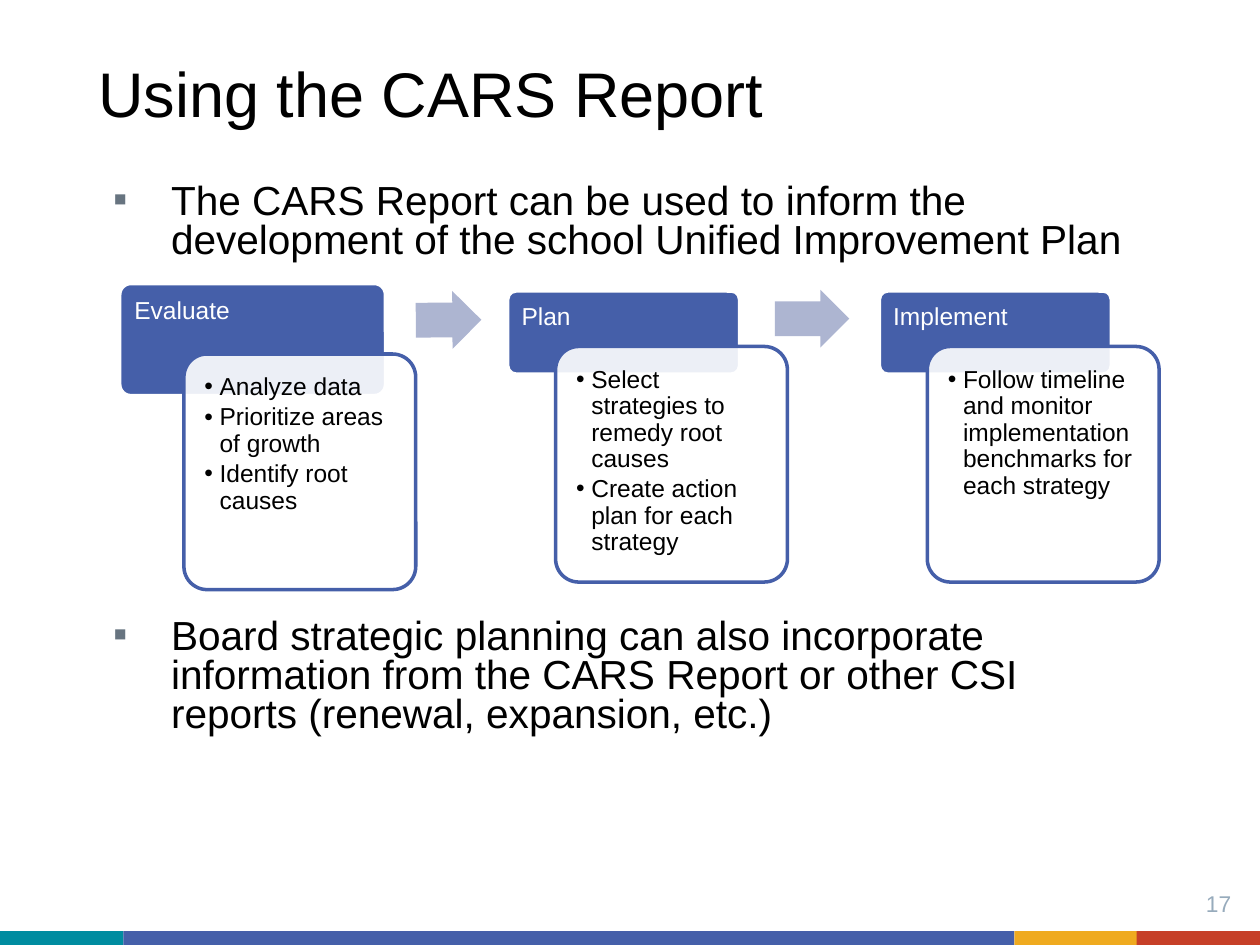
from dataclasses import dataclass

from lxml.etree import SubElement
from pptx import Presentation
from pptx.dml.color import RGBColor
from pptx.enum.shapes import MSO_SHAPE as Shape
from pptx.enum.text import MSO_ANCHOR as Anchor, MSO_AUTO_SIZE as AutoSize, PP_ALIGN as Align
from pptx.oxml.ns import qn
from pptx.util import Inches, Pt

BLUE, WHITE, BLACK = "455FA9", "FFFFFF", "000000"
ARROW_BLUE, BULLET_GREY, NUMBER_GREY = "ADB5D1", "677480", "97ABBC"


@dataclass
class Band:
    left: float
    width: float
    color: str


@dataclass
class Stage:
    title: str
    tasks: list[str]
    left: float
    top: float
    width: float
    height: float
    card_dx: float
    card_dy: float


@dataclass
class Arrow:
    left: float
    top: float
    width: float
    rotation: float


BANDS = [
    Band(8.05, 0.98, "EFAA1F"),
    Band(9.02, 0.98, "C63F28"),
    Band(0, 0.98, "008CA0"),
    Band(0.98, 7.07, BLUE),
]
STAGES = [
    Stage("Evaluate", ["Analyze data", "Prioritize areas of growth", "Identify root causes"],
          0.95, 2.25, 2.11, 0.89, 0.51, 0.56),
    Stage("Plan", ["Select strategies to remedy root causes", "Create action plan for each strategy"],
          4.03, 2.31, 1.84, 0.66, 0.38, 0.44),
    Stage("Implement", ["Follow timeline and monitor implementation benchmarks for each strategy"],
          6.98, 2.31, 1.84, 0.66, 0.38, 0.44),
]
ARROWS = [Arrow(3.3, 2.31, 0.52, -0.4), Arrow(6.15, 2.3, 0.59, 0)]
POINTS = [
    "The CARS Report can be used to inform the development of the school Unified Improvement Plan",
    "Board strategic planning can also incorporate information from the CARS Report or other CSI "
    "reports (renewal, expansion, etc.)",
]


def rgb(color: str) -> RGBColor:
    return RGBColor.from_string(color)


def add_block(slide, kind, left: float, top: float, width: float, height: float,
              fill: str, line: str | None = None):
    block = slide.shapes.add_shape(kind, Inches(left), Inches(top), Inches(width), Inches(height))
    block.shadow.inherit = False
    block.fill.solid()
    block.fill.fore_color.rgb = rgb(fill)
    if line:
        block.line.color.rgb = rgb(line)
        block.line.width = Pt(2)
    else:
        block.line.fill.background()
    return block


def write(frame, lines: list[str], size: float, color: str, inset: float = 0.1,
          anchor=Anchor.TOP, align=Align.LEFT, spacing: float = 1.0) -> None:
    frame.text = "\n".join(lines)
    frame.word_wrap = True
    frame.auto_size = AutoSize.NONE
    frame.vertical_anchor = anchor
    frame.margin_left = frame.margin_right = Inches(inset)
    frame.margin_top = frame.margin_bottom = Inches(inset)
    for paragraph in frame.paragraphs:
        paragraph.alignment = align
        paragraph.line_spacing = spacing
        for run in paragraph.runs:
            run.font.name = "Arial"
            run.font.size = Pt(size)
            run.font.color.rgb = rgb(color)


def add_bullets(frame, mark: str, color: str, margin: float, hanging: float, gap: float) -> None:
    for index, paragraph in enumerate(frame.paragraphs):
        properties = paragraph._p.get_or_add_pPr()
        properties.set("marL", str(Inches(margin)))
        properties.set("indent", str(-Inches(hanging)))
        bullet_color = SubElement(properties, qn("a:buClr"))
        SubElement(bullet_color, qn("a:srgbClr"), val=color)
        SubElement(properties, qn("a:buFont"), typeface="Arial")
        SubElement(properties, qn("a:buChar"), char=mark)
        paragraph.space_before = Pt(gap if index else 0)


def add_stage(slide, stage: Stage) -> None:
    header = add_block(slide, Shape.ROUNDED_RECTANGLE, stage.left, stage.top,
                       stage.width, stage.height, BLUE, WHITE)
    header.adjustments[0] = 0.1
    write(header.text_frame, [stage.title], 14, WHITE, inset=0.09, spacing=0.9)

    card = add_block(slide, Shape.ROUNDED_RECTANGLE, stage.left + stage.card_dx,
                     stage.top + stage.card_dy, 1.84, 1.87, WHITE, BLUE)
    card.adjustments[0] = 0.1
    card_color = card.fill._xPr.find(qn("a:solidFill")).find(qn("a:srgbClr"))
    SubElement(card_color, qn("a:alpha"), val="90000")
    write(card.text_frame, stage.tasks, 14, BLACK, inset=0.11, spacing=0.9)
    add_bullets(card.text_frame, "•", BLACK, 0.12, 0.12, 2.1)


def add_arrow(slide, arrow: Arrow) -> None:
    shape = add_block(slide, Shape.RIGHT_ARROW, arrow.left, arrow.top, arrow.width, 0.46, ARROW_BLUE)
    shape.adjustments[0] = 0.6
    shape.adjustments[1] = 0.5
    shape.rotation = arrow.rotation


def add_text(slide, left: float, top: float, width: float, height: float):
    box = slide.shapes.add_textbox(Inches(left), Inches(top), Inches(width), Inches(height))
    return box.text_frame


def main() -> None:
    deck = Presentation()
    deck.slide_width, deck.slide_height = Inches(10), Inches(7.5)
    slide = deck.slides.add_slide(deck.slide_layouts[5])

    for band in BANDS:
        add_block(slide, Shape.RECTANGLE, band.left, 7.39, band.width, 0.11, band.color)

    title = slide.shapes.title
    title.left, title.top = Inches(0.68), Inches(0.31)
    title.width, title.height = Inches(8.25), Inches(0.82)
    write(title.text_frame, ["Using the CARS Report"], 36, BLACK, anchor=Anchor.BOTTOM)

    points = add_text(slide, 0.76, 1.36, 8.43, 4.98)
    write(points, POINTS, 23.2, BLACK, spacing=0.8)
    add_bullets(points, "▪", BULLET_GREY, 0.5, 0.46, 204)

    for stage in STAGES:
        add_stage(slide, stage)
    for arrow in ARROWS:
        add_arrow(slide, arrow)

    page_number = add_text(slide, 9.27, 6.96, 0.6, 0.46)
    write(page_number, ["17"], 13, NUMBER_GREY, align=Align.RIGHT)

    deck.save("out.pptx")


if __name__ == "__main__":
    main()
